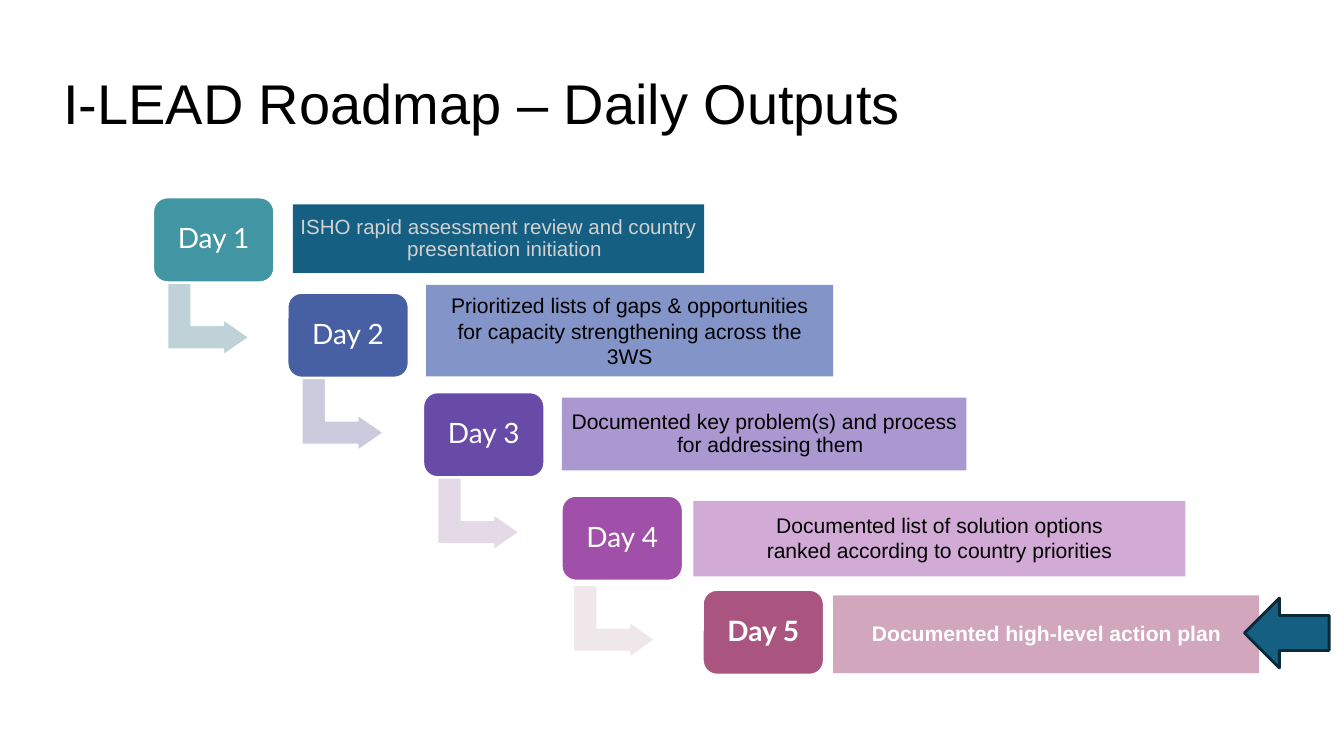
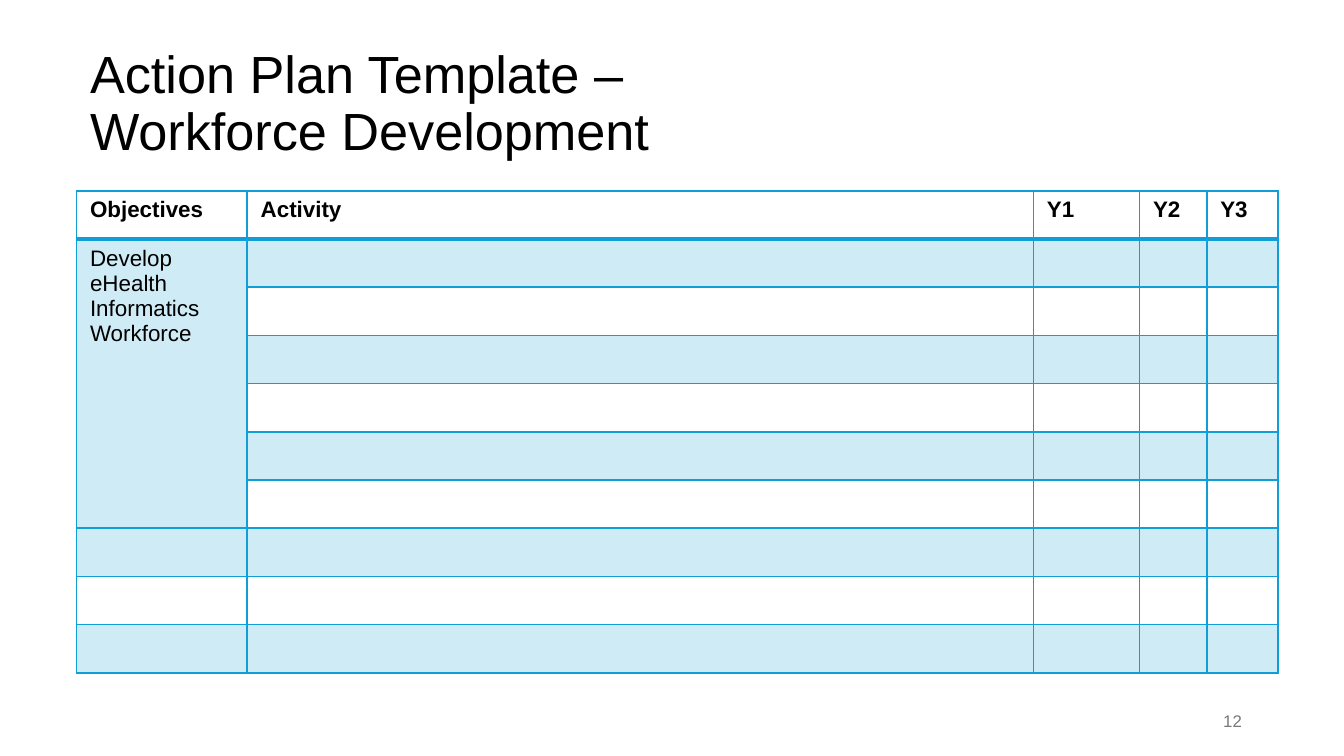
from lxml.etree import SubElement as Sub
from pptx import Presentation
from pptx.dml.color import RGBColor
from pptx.enum.shapes import MSO_SHAPE as Geo
from pptx.enum.text import MSO_ANCHOR as Anchor, MSO_AUTO_SIZE as Auto, PP_ALIGN as Align
from pptx.oxml.ns import qn
from pptx.util import Inches, Pt

BLACK, WHITE, BLUE, TEAL = "000000", "FFFFFF", "0F9ED5", "156082"
WIDE = 10
TALL = WIDE * 9 / 16
PILL = (0.9, 0.63)
BEND = (0.54, 0.61)

DAYS = [
    dict(name="Day 1", pill=(1.14, 1.47), fill="4295A2", bar=(2.18, 1.52, 3.06, 0.51),
         tint=TEAL, ink="D1D1D1", size=11, pad=0.02, bend=(1.28, 2.07), pale="BED2D7",
         text="ISHO rapid assessment review and country presentation initiation"),
    dict(name="Day 2", pill=(2.14, 2.18), fill="4760A3", bar=(3.17, 2.12, 3.03, 0.68),
         tint="8294C8", pad=0.1, hang=0, lead=1.0, bend=(2.28, 2.78), pale="CCCBDE",
         text="Prioritized lists of gaps & opportunities for capacity strengthening across the 3WS"),
    dict(name="Day 3", pill=(3.15, 2.92), fill="684BA6", bar=(4.18, 2.96, 3.01, 0.54),
         tint="AB98D0", bend=(3.29, 3.52), pale="E4D9E7",
         text="Documented key problem(s) and process for addressing them"),
    dict(name="Day 4", pill=(4.18, 3.69), fill="A050A8", bar=(5.16, 3.73, 3.66, 0.56),
         tint="D2AAD6", hang=0.07, bend=(4.3, 4.32), pale="F0E7EA",
         text="Documented list of solution options\nranked according to country priorities"),
    dict(name="Day 5", pill=(5.23, 4.39), fill="AA557F", bar=(6.2, 4.43, 3.17, 0.58),
         tint="D2A6BC", ink=WHITE, bold=True,
         text="Documented high-level action plan"),
]

HEADS = ["Objectives", "Activity", "Y1", "Y2", "Y3"]
GOAL = "Develop eHealth Informatics Workforce"
COLS = [1.27, 5.85, 0.79, 0.5, 0.53]
ROWS, SPAN, DEPTH = 10, 6, 3.59


def rgb(code):
    """Turn a hex string into a colour."""
    return RGBColor.from_string(code)


def write(frame, text, size, ink, font="Arial", bold=False, align=Align.LEFT, lead=1.0, pad=None):
    """Fill a text frame and format its runs."""
    frame.text = text
    frame.word_wrap = True
    frame.vertical_anchor = Anchor.MIDDLE
    if pad is not None:
        frame.margin_left = frame.margin_right = Inches(pad)
        frame.margin_top = frame.margin_bottom = Inches(pad)
    for para in frame.paragraphs:
        para.alignment, para.line_spacing = align, lead
        for run in para.runs:
            run.font.name, run.font.size, run.font.bold = font, Pt(size), bold
            run.font.color.rgb = rgb(ink)


def shape(slide, kind, box, fill, line=None, width=1):
    """Add a filled shape."""
    item = slide.shapes.add_shape(kind, *map(Inches, box))
    item.shadow.inherit = False
    item.fill.solid()
    item.fill.fore_color.rgb = rgb(fill)
    if line:
        item.line.color.rgb = rgb(line)
        item.line.width = Pt(width)
    else:
        item.line.fill.background()
    return item


def page(deck, title, box, size, lead, pad=None):
    """Add a slide with its title."""
    slide = deck.slides.add_slide(deck.slide_layouts[5])
    head = slide.shapes.title
    head.left, head.top, head.width, head.height = map(Inches, box)
    write(head.text_frame, title, size, BLACK, lead=lead, pad=pad)
    head.text_frame.auto_size = Auto.NONE
    return slide


def step(slide, day):
    """Draw one day: bent arrow, pill and output bar."""
    if "bend" in day:
        bend = shape(slide, Geo.BENT_UP_ARROW, day["bend"] + BEND, day["pale"], WHITE)
        bend.rotation = 90
        for i, val in enumerate((0.33, 0.25, 0.36)):
            bend.adjustments[i] = val
    bold = day.get("bold", False)
    pill = shape(slide, Geo.ROUNDED_RECTANGLE, day["pill"] + PILL, day["fill"], WHITE)
    write(pill.text_frame, day["name"], 15, WHITE, "Lato", bold, Align.CENTER, 0.9, 0.06)
    bar = shape(slide, Geo.RECTANGLE, day["bar"], day["tint"])
    write(bar.text_frame, day["text"], day.get("size", 11.25), day.get("ink", BLACK),
          bold=bold, align=Align.CENTER, lead=day.get("lead", 0.9), pad=day.get("pad", 0.05))
    hang = Inches(day.get("hang", 0.09))
    for i, para in enumerate(bar.text_frame.paragraphs):
        props = para._p.get_or_add_pPr()
        props.set("marL", str(hang))
        props.set("indent", str(-hang))
        if i:
            para.space_before = Pt(1.3)


def style(cell, head, tint):
    """Set the borders and fill of a cell."""
    props = cell._tc.get_or_add_tcPr()
    for side in "LRTB":
        width = Pt(2 if head and side == "B" else 1)
        line = Sub(props, qn(f"a:ln{side}"), w=str(width))
        Sub(Sub(line, qn("a:solidFill")), qn("a:srgbClr"), val=BLUE)
    if tint:
        cell.fill.solid()
        cell.fill.fore_color.rgb = rgb(BLUE)
        color = props.find(qn("a:solidFill")).find(qn("a:srgbClr"))
        Sub(color, qn("a:alpha"), val="20000")
    else:
        cell.fill.background()


def plan(slide):
    """Draw the action plan table."""
    box = (0.57, 1.42, sum(COLS), DEPTH)
    grid = slide.shapes.add_table(ROWS, len(COLS), *map(Inches, box)).table
    grid.first_row = grid.horz_banding = False
    for col, wide in zip(grid.columns, COLS):
        col.width = Inches(wide)
    words = {(0, c): head for c, head in enumerate(HEADS)}
    words[1, 0] = GOAL
    for r in range(ROWS):
        grid.rows[r].height = Inches(DEPTH / ROWS)
        for c in range(len(COLS)):
            cell = grid.cell(r, c)
            style(cell, r == 0, r % 2 == 1)
            if (r, c) in words:
                write(cell.text_frame, words[r, c], 12, BLACK, bold=r == 0)
                cell.vertical_anchor = Anchor.TOP
            else:
                Sub(cell.text_frame.paragraphs[0]._p, qn("a:endParaRPr"), sz="1200")
    grid.cell(1, 0).merge(grid.cell(SPAN, 0))


def main():
    """Build both slides and save the deck."""
    deck = Presentation()
    deck.slide_width, deck.slide_height = Inches(WIDE), Inches(TALL)

    road = page(deck, "I-LEAD Roadmap – Daily Outputs ", (0.47, 0.17, 7.8, 1.28), 30, 0.8, 0)
    for day in DAYS:
        step(road, day)
    shape(road, Geo.LEFT_ARROW, (9.26, 4.45, 0.63, 0.52), TEAL, "092A39", 1.5)

    form = page(deck, "Action Plan Template – Workforce Development",
                (0.57, 0.14, 5.98, 1.28), 28, 0.9)
    plan(form)
    num = form.shapes.add_textbox(*map(Inches, (7.06, 5.21, 2.25, 0.3)))
    write(num.text_frame, "12", 9, "797979", align=Align.RIGHT, pad=0.07)

    deck.save("out.pptx")


if __name__ == "__main__":
    main()
